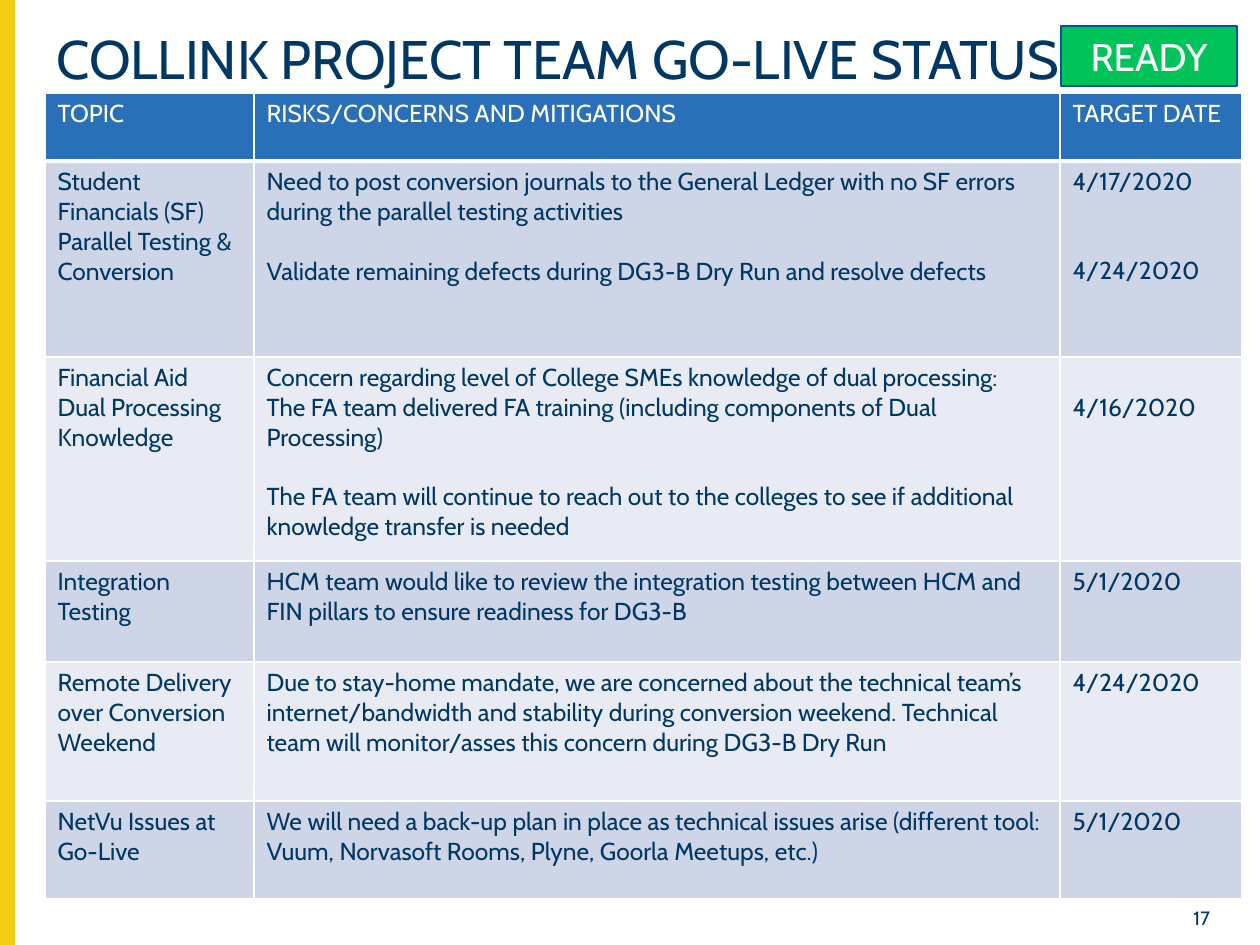
from pptx import Presentation
from pptx.dml.color import RGBColor as RGB
from pptx.enum.shapes import MSO_SHAPE as SHAPE
from pptx.enum.text import MSO_ANCHOR as ANCHOR, MSO_AUTO_SIZE as AUTO, PP_ALIGN as ALIGN
from pptx.oxml import parse_xml
from pptx.oxml.ns import nsdecls
from pptx.util import Pt

COLORS = {
    "navy": "003764", "gold": "F4CE12", "green": "00C459", "edge": "00559B",
    "header": "2A70B8", "band": "CDD5E6", "light": "E8EBF3", "white": "FFFFFF",
}
PX = 914400 / 126
LINE = 17

HEADINGS = ["TOPIC", "RISKS/CONCERNS AND MITIGATIONS", "TARGET DATE"]
TOPICS = [
    ("Student Financials (SF) Parallel Testing & Conversion",
     [("Need to post conversion journals to the General Ledger with no SF errors "
       "during the parallel testing activities", 0),
      ("Validate remaining defects during DG3-B Dry Run and resolve defects", 1)],
     [("4/17/2020", 0), ("4/24/2020", 2)]),
    ("Financial Aid Dual Processing Knowledge",
     [("Concern regarding level of College SMEs knowledge of dual processing:", 0),
      ("The FA team delivered FA training (including components of Dual Processing)", 0),
      ("The FA team will continue to reach out to the colleges to see if additional "
       "knowledge transfer is needed", 1)],
     [("4/16/2020", 1)]),
    ("Integration Testing",
     [("HCM team would like to review the integration testing between HCM and FIN "
       "pillars to ensure readiness for DG3-B", 0)],
     [("5/1/2020", 0)]),
    ("Remote Delivery over Conversion Weekend",
     [("Due to stay-home mandate, we are concerned about the technical team’s "
       "internet/bandwidth and stability during conversion weekend. Technical team "
       "will monitor/asses this concern during DG3-B Dry Run", 0)],
     [("4/24/2020", 0)]),
    ("NetVu Issues at Go-Live",
     [("We will need a back-up plan in place as technical issues arise (different tool: "
       "Vuum, Norvasoft Rooms, Plyne, Goorla Meetups, etc.)", 0)],
     [("5/1/2020", 0)]),
]


def px(n):
    return round(n * PX)


def rgb(name):
    return RGB.from_string(COLORS[name])


class Deck:
    font = "Cabin"

    def __init__(self, width, height):
        self.prs = Presentation()
        self.prs.slide_width, self.prs.slide_height = px(width), px(height)
        self.s = self.prs.slides.add_slide(self.prs.slide_layouts[5])

    def style(self, p, size, color, align=ALIGN.LEFT):
        p.alignment = align
        p.font.name, p.font.size = self.font, Pt(size)
        p.font.color.rgb = rgb(color)

    def title(self, text, box, size):
        sp = self.s.shapes.title
        sp.left, sp.top, sp.width, sp.height = map(px, box)
        tf = sp.text_frame
        tf.text = text
        tf.auto_size = AUTO.NONE
        tf.vertical_anchor = ANCHOR.TOP
        p = tf.paragraphs[0]
        p.line_spacing = 0.9
        self.style(p, size, "navy")

    def rect(self, box, fill, line, text="", size=22):
        sp = self.s.shapes.add_shape(SHAPE.RECTANGLE, *map(px, box))
        sp.shadow.inherit = False
        sp.fill.solid()
        sp.fill.fore_color.rgb = rgb(fill)
        sp.line.color.rgb, sp.line.width = rgb(line), Pt(1)
        if text:
            sp.text_frame.text = text
            self.style(sp.text_frame.paragraphs[0], size, "white", ALIGN.CENTER)

    def text(self, text, box, size, align):
        tf = self.s.shapes.add_textbox(*map(px, box)).text_frame
        tf.word_wrap = True
        tf.vertical_anchor = ANCHOR.MIDDLE
        tf.margin_left = tf.margin_right = tf.margin_top = tf.margin_bottom = 0
        tf.text = text
        self.style(tf.paragraphs[0], size, "navy", align)

    def cell(self, cell, items, fill, color, top, bottom):
        cell.fill.solid()
        cell.fill.fore_color.rgb = rgb(fill)
        tf = cell.text_frame
        for i, (text, gap) in enumerate(items):
            p = tf.paragraphs[0] if i == 0 else tf.add_paragraph()
            p.text = text
            self.style(p, 14, color)
            if i == 0:
                cell.margin_top = px(6) + Pt(gap * LINE)
            else:
                p.space_before = Pt(gap * LINE)
        sides = [("L", 1), ("R", 1), ("T", top), ("B", bottom)]
        for i, (side, width) in enumerate(sides):
            cell._tc.get_or_add_tcPr().insert(i, parse_xml(
                f'<a:ln{side} {nsdecls("a")} w="{Pt(width)}"><a:solidFill>'
                f'<a:srgbClr val="{COLORS["white"]}"/></a:solidFill></a:ln{side}>'))

    def table(self, left, top, widths, heights, headings, topics):
        box = map(px, (left, top, sum(widths), sum(heights)))
        table = self.s.shapes.add_table(len(heights), len(widths), *box).table
        table.horz_banding = False
        for col, width in zip(table.columns, widths):
            col.width = px(width)
        for row, height in zip(table.rows, heights):
            row.height = px(height)
        for c, heading in enumerate(headings):
            self.cell(table.cell(0, c), [(heading, 0)], "header", "white", 1, 3)
            table.cell(0, c).text_frame.paragraphs[0].font.bold = False
        for r, (topic, risks, dates) in enumerate(topics, 1):
            fill = "band" if r % 2 else "light"
            for c, items in enumerate(([(topic, 0)], risks, dates)):
                self.cell(table.cell(r, c), items, fill, "navy", 3 if r == 1 else 1, 1)

    def save(self):
        self.prs.save("out.pptx")


def main():
    deck = Deck(1260, 945)
    deck.rect((0, 0, 14, 945), "gold", "gold")
    deck.text("17", (1159, 900, 51, 36), 11, ALIGN.RIGHT)
    deck.title("COLLINK PROJECT TEAM GO-LIVE STATUS:", (44, 26, 1193, 108), 31)
    deck.rect((1061, 26, 176, 60), "green", "edge", "READY")
    deck.table(45, 93, (209, 806, 182), (68, 196, 204, 101, 139, 98), HEADINGS, TOPICS)
    deck.save()


if __name__ == "__main__":
    main()
